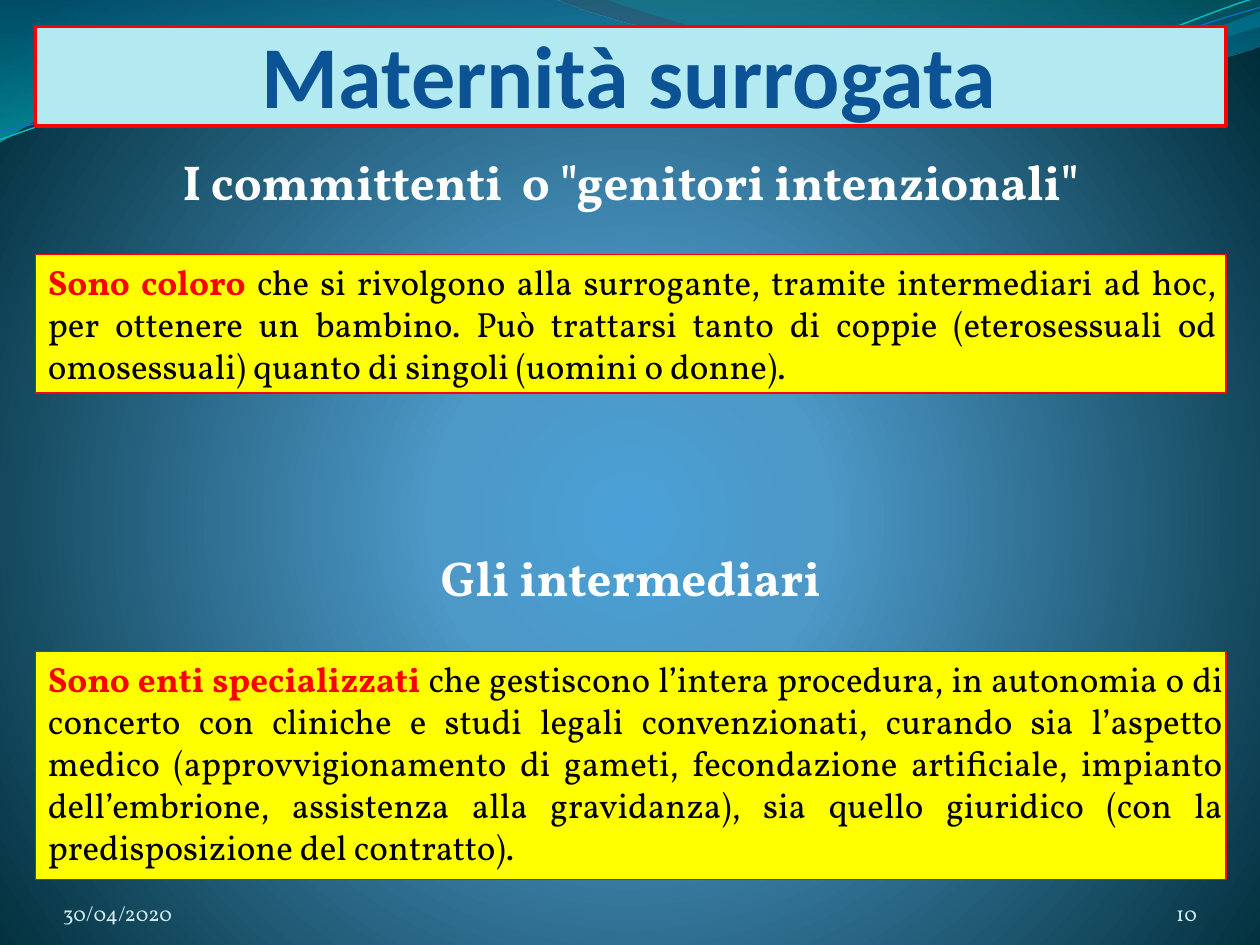
from math import cos, radians, sin

from pptx import Presentation
from pptx.dml.color import RGBColor
from pptx.enum.shapes import MSO_SHAPE
from pptx.enum.text import MSO_ANCHOR, MSO_AUTO_SIZE, PP_ALIGN
from pptx.oxml import parse_xml
from pptx.oxml.ns import nsdecls, qn
from pptx.util import Inches, Pt

COLORS = {
    "title_fill": "B3EAF2", "title_text": "0B5394", "red": "FF0000",
    "yellow": "FFFF00", "black": "000000", "white": "FFFFFF",
    "footer": "D1EAEE", "teal_line": "0AB8BF", "blue_line": "0F6FC6",
}
BODY_FONT = "Vollkorn"
LEFT, WIDTH = 0.28, 9.45
LINE_TILT = -2.7

# Gradient stops: position %, colour, opacity %
BACKGROUND_STOPS = [(0, "4AA0D6", 100), (25, "4C98C7", 100), (100, "002C38", 100)]
RADIAL = '<a:path path="circle"><a:fillToRect l="10000" t="110000" r="10000" b="100000"/></a:path>'
VERTICAL = '<a:lin ang="5400000" scaled="1"/>'

# Wave outlines: each step is one point (line) or three points (Bezier curve)
FILLED_WAVES = [
    ([[(0, 0)], [(4.4, -0.01)],
      [(4.76, 0.17), (6.64, 0.63), (7.58, 0.63)],
      [(8.53, 0.63), (9.58, 0.26), (10, 0.09)],
      [(10.01, 0.36)],
      [(9.83, 0.44), (8.7, 0.76), (7.46, 0.75)],
      [(6.22, 0.75), (3.82, 0.28), (2.57, 0.34)],
      [(1.29, 0.36), (0.46, 0.83), (-0.01, 1.13)],
      [(0, 0)]],
     [(0, "0074A1", 45), (100, "00C6CF", 55)]),
    ([[(4.79, -0.01)],
      [(5.09, 0.11), (6.82, 0.62), (7.69, 0.65)],
      [(8.56, 0.69), (9.61, 0.32), (10, 0.21)],
      [(10, 0)], [(4.79, -0.01)]],
     [(0, "00A1A9", 30), (80, "008BBF", 45)]),
]
# Line waves: outline, centre, colour, width
LINE_WAVES = [
    ([[(0, 1.11)],
      [(0.48, 0.93), (1.58, 0.57), (2.77, 0.52)],
      [(3.95, 0.47), (5.93, 0.89), (7.13, 0.8)],
      [(8.33, 0.71), (9.38, 0.15), (9.98, -0.02)]], (4.99, 0.57), "teal_line", 0.85),
    ([[(0, 1.04)],
      [(0.47, 0.96), (1.64, 0.61), (2.83, 0.56)],
      [(4.03, 0.51), (5.97, 0.84), (7.17, 0.75)],
      [(8.36, 0.67), (9.41, 0.21), (10, 0.06)]], (5, 0.59), "blue_line", 0.75),
]


def color(name):
    return RGBColor.from_string(COLORS[name])


def set_gradient(fill, element, stops, direction):
    """Give a fill its stops and its linear or radial direction."""
    fill.gradient()
    stop_xml = "".join(
        f'<a:gs pos="{position * 1000}"><a:srgbClr val="{value}">'
        f'<a:alpha val="{opacity * 1000}"/></a:srgbClr></a:gs>'
        for position, value, opacity in stops)
    gradient = parse_xml(
        f'<a:gradFill {nsdecls("a")} rotWithShape="1">'
        f'<a:gsLst>{stop_xml}</a:gsLst>{direction}</a:gradFill>')
    old = next(element.iter(qn("a:gradFill")))
    old.getparent().replace(old, gradient)


def rotate(point, center, degrees):
    angle = radians(degrees)
    x, y = point[0] - center[0], point[1] - center[1]
    return (center[0] + x * cos(angle) - y * sin(angle),
            center[1] + x * sin(angle) + y * cos(angle))


def add_wave(slide, outline, closed):
    """Build the outline point by point, then join triples into curves."""
    points = [(Inches(x), Inches(y)) for step in outline for x, y in step]
    builder = slide.shapes.build_freeform(*points[0])
    builder.add_line_segments(points[1:], close=closed)
    shape = builder.convert_to_shape()
    shape.shadow.inherit = False
    segments = iter(list(shape.element.iter(qn("a:lnTo"))))
    for step in outline[1:]:
        lines = [next(segments) for _ in step]
        if len(lines) == 3:
            curve = parse_xml(f'<a:cubicBezTo {nsdecls("a")}/>')
            lines[0].addprevious(curve)
            for line in lines:
                curve.append(line[0])
                line.getparent().remove(line)
    return shape


def add_waves(slide):
    for outline, stops in FILLED_WAVES:
        shape = add_wave(slide, outline, True)
        set_gradient(shape.fill, shape.element, stops, VERTICAL)
        shape.line.fill.background()
    for outline, center, line_color, width in LINE_WAVES:
        level = [[rotate(point, center, -LINE_TILT) for point in step] for step in outline]
        shape = add_wave(slide, level, False)
        shape.rotation = LINE_TILT
        shape.fill.background()
        style_line(shape, line_color, width)


def style_line(shape, line_color, width):
    shape.line.color.rgb = color(line_color)
    shape.line.width = Pt(width)


def style_run(run, size, color_name, bold=False, font=BODY_FONT):
    run.font.name = font
    run.font.size = Pt(size)
    run.font.bold = bold
    run.font.color.rgb = color(color_name)


def set_margins(text_frame, left, top, right, bottom):
    text_frame.margin_left, text_frame.margin_top = Inches(left), Inches(top)
    text_frame.margin_right, text_frame.margin_bottom = Inches(right), Inches(bottom)


def format_title(slide, text):
    title = slide.shapes.title
    slide.shapes.element.append(title.element)  # in front of the waves
    title.left, title.top = Inches(LEFT), Inches(0.21)
    title.width, title.height = Inches(WIDTH), Inches(0.79)
    title.fill.solid()
    title.fill.fore_color.rgb = color("title_fill")
    style_line(title, "red", 2)
    text_frame = title.text_frame
    text_frame.text = text
    text_frame.auto_size = MSO_AUTO_SIZE.NONE
    text_frame.vertical_anchor = MSO_ANCHOR.BOTTOM
    set_margins(text_frame, 0, 0, 0.02, 0)
    paragraph = text_frame.paragraphs[0]
    paragraph.alignment = PP_ALIGN.CENTER
    style_run(paragraph.runs[0], 50.4, "title_text", True, "Calibri")


def add_text(slide, text, left, top, width, height, alignment, size, color_name, bold=False):
    box = slide.shapes.add_textbox(Inches(left), Inches(top), Inches(width), Inches(height))
    text_frame = box.text_frame
    text_frame.word_wrap = True
    text_frame.text = text
    paragraph = text_frame.paragraphs[0]
    paragraph.alignment = alignment
    style_run(paragraph.runs[0], size, color_name, bold)
    return text_frame


def add_heading(slide, text, top):
    text_frame = add_text(slide, text, LEFT, top, WIDTH, 0.57, PP_ALIGN.CENTER, 28, "white", True)
    text_frame.auto_size = MSO_AUTO_SIZE.SHAPE_TO_FIT_TEXT


def add_footer(slide, text, left, width, alignment):
    text_frame = add_text(slide, text, left, 6.95, width, 0.4, alignment, 12, "footer")
    text_frame.vertical_anchor = MSO_ANCHOR.BOTTOM
    set_margins(text_frame, 0, 0, 0, 0)


def add_definition(slide, term, text, top, height, right_indent=0, space_before=0):
    shape = slide.shapes.add_shape(
        MSO_SHAPE.RECTANGLE, Inches(LEFT), Inches(top), Inches(WIDTH), Inches(height))
    shape.shadow.inherit = False
    shape.fill.solid()
    shape.fill.fore_color.rgb = color("yellow")
    style_line(shape, "red", 0.75)
    text_frame = shape.text_frame
    text_frame.word_wrap = True
    text_frame.vertical_anchor = MSO_ANCHOR.TOP
    set_margins(text_frame, 0, 0.05, 0.02, 0.05)
    paragraph = text_frame.paragraphs[0]
    paragraph.alignment = PP_ALIGN.JUSTIFY
    paragraph.space_before = Pt(space_before)
    properties = paragraph._p.get_or_add_pPr()
    properties.set("marL", str(Inches(0.1)))
    properties.set("marR", str(Inches(right_indent)))
    for content, color_name, bold in ((term + " ", "red", True), (text, "black", False)):
        run = paragraph.add_run()
        run.text = content
        style_run(run, 20, color_name, bold)


def main():
    presentation = Presentation()
    presentation.slide_width, presentation.slide_height = Inches(10), Inches(7.5)
    slide = presentation.slides.add_slide(presentation.slide_layouts[5])
    # Backdrop
    set_gradient(slide.background.fill, slide.element, BACKGROUND_STOPS, RADIAL)
    add_waves(slide)
    # Title, definitions and footer
    format_title(slide, "Maternità surrogata")
    add_definition(
        slide, "Sono coloro",
        "che si rivolgono alla surrogante, tramite intermediari ad hoc, per ottenere un bambino. "
        "Può trattarsi tanto di coppie (eterosessuali od omosessuali) quanto di singoli "
        "(uomini o donne).", 2.02, 1.1, right_indent=0.05, space_before=4)
    add_footer(slide, "30/04/2020", 0.5, 2.33, PP_ALIGN.LEFT)
    add_footer(slide, "10", 8.67, 0.83, PP_ALIGN.RIGHT)
    add_heading(slide, 'I committenti  o "genitori intenzionali"', 1.15)
    add_definition(
        slide, "Sono enti specializzati",
        "che gestiscono l’intera procedura, in autonomia o di concerto con cliniche e studi legali "
        "convenzionati, curando sia l’aspetto medico (approvvigionamento di gameti, fecondazione "
        "artificiale, impianto dell’embrione, assistenza alla gravidanza), sia quello giuridico "
        "(con la predisposizione del contratto).", 5.17, 1.81)
    add_heading(slide, "Gli intermediari", 4.3)
    presentation.save("out.pptx")


if __name__ == "__main__":
    main()
